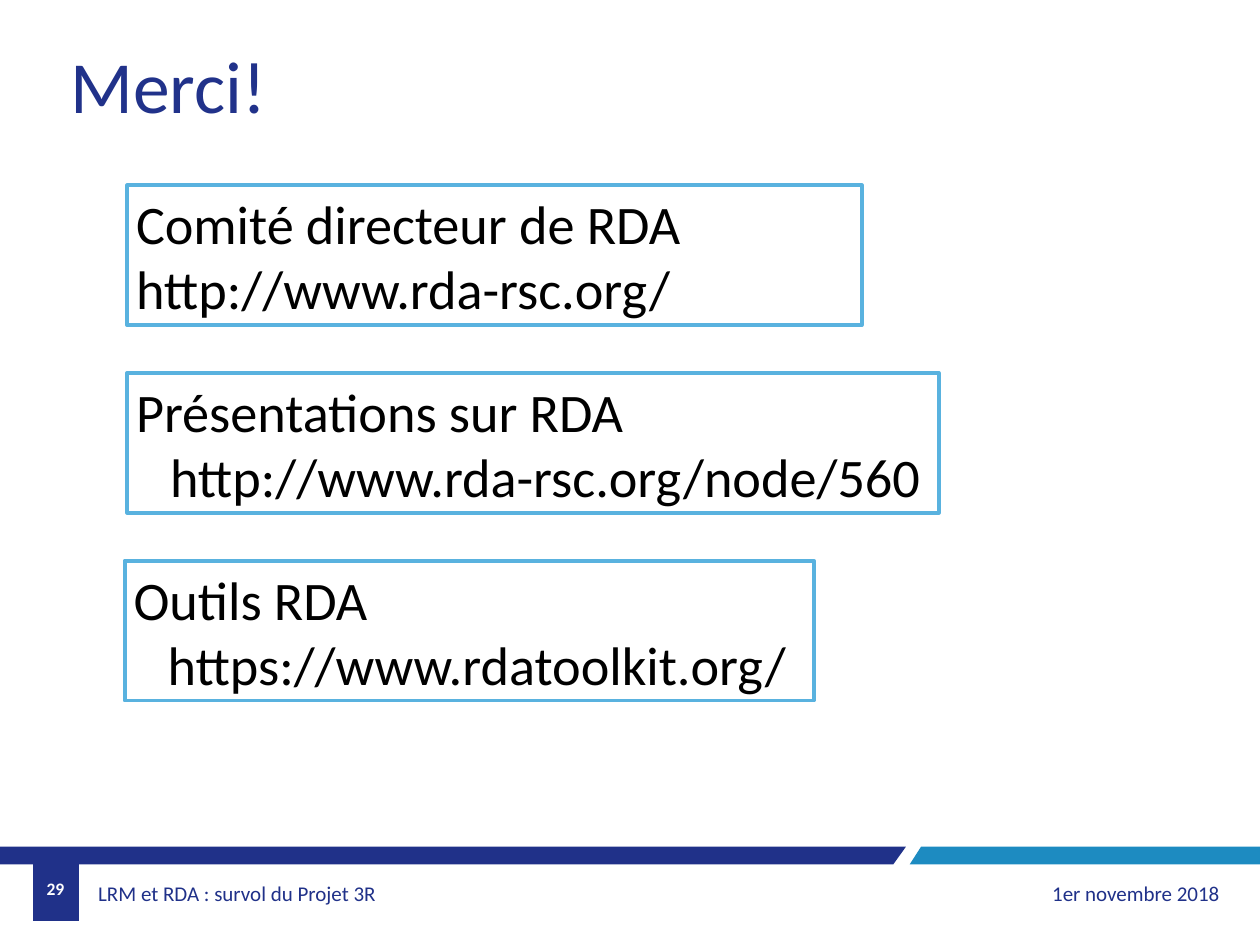
from pptx import Presentation
from pptx.dml.color import RGBColor
from pptx.enum.shapes import MSO_SHAPE as Shape
from pptx.enum.text import MSO_ANCHOR as Anchor, PP_ALIGN as Align
from pptx.util import Inches, Pt

COLORS = {
    "navy": "203189",
    "title": "21328A",
    "blue": "1D8BC1",
    "border": "59B2DF",
    "black": "000000",
    "white": "FFFFFF",
}


def rgb(name):
    return RGBColor.from_string(COLORS[name])


def write_text(shape, lines, size, color, bold=False, align=Align.LEFT,
               anchor=Anchor.TOP, wrap=True, insets=(0.07, 0.04), indent=0):
    frame = shape.text_frame
    frame.word_wrap = wrap
    frame.vertical_anchor = anchor
    frame.margin_left = frame.margin_right = Inches(insets[0])
    frame.margin_top = frame.margin_bottom = Inches(insets[1])
    for index, line in enumerate(lines):
        paragraph = frame.paragraphs[0] if index == 0 else frame.add_paragraph()
        paragraph.alignment = align
        if index and indent:
            properties = paragraph._p.get_or_add_pPr()
            properties.set("marL", str(Inches(indent)))
            properties.set("indent", "0")
        run = paragraph.add_run()
        run.text = line
        run.font.name = "Calibri"
        run.font.size = Pt(size)
        run.font.bold = bold
        run.font.color.rgb = rgb(color)


def add_text(slide, box, lines, **style):
    shape = slide.shapes.add_textbox(*map(Inches, box))
    write_text(shape, lines, **style)


def add_band(slide, points, color):
    corners = [(Inches(x), Inches(y)) for x, y in points]
    builder = slide.shapes.build_freeform(*corners[0])
    builder.add_line_segments(corners[1:], close=True)
    band = builder.convert_to_shape()
    band.shadow.inherit = False
    band.fill.solid()
    band.fill.fore_color.rgb = rgb(color)
    band.line.fill.background()


def add_footer(slide, left, top, width, height):
    right, bar_bottom = left + width, top + 0.14
    tab_left, tab_right = left + 0.26, left + 0.63
    text_top, text_height = top + 0.18, 0.38
    add_band(slide, [(left, top), (left + 7.19, top),
                     (left + 7.09, bar_bottom), (left, bar_bottom)], "navy")
    add_band(slide, [(left + 7.31, top), (right, top),
                     (right, bar_bottom), (left + 7.22, bar_bottom)], "blue")
    add_band(slide, [(tab_left, top), (tab_right, top),
                     (tab_right, top + height), (tab_left, top + height)], "navy")
    add_text(slide, (left + 0.73, text_top, 3.86, text_height),
             ["LRM et RDA : survol du Projet 3R"], size=12, color="navy",
             anchor=Anchor.MIDDLE, insets=(0.05, 0.03))
    add_text(slide, (left + 7.19, text_top, 2.56, text_height),
             ["1er novembre 2018"], size=12, color="navy",
             align=Align.RIGHT, anchor=Anchor.MIDDLE)
    add_text(slide, (tab_left, bar_bottom, 0.36, text_height), ["29"], size=10,
             color="white", bold=True, align=Align.CENTER, anchor=Anchor.MIDDLE)


def add_resource(slide, box, lines):
    shape = slide.shapes.add_shape(Shape.RECTANGLE, *map(Inches, box))
    shape.shadow.inherit = False
    shape.fill.background()
    shape.line.color.rgb = rgb("border")
    shape.line.width = Pt(2.25)
    write_text(shape, lines, size=31, color="black", indent=0.27)


def add_resources(slide, top, height, pitch):
    resources = [
        (1.01, 5.83, ["Comité directeur de RDA http://www.rda-rsc.org/"]),
        (1.01, 6.44, ["Présentations sur RDA", "http://www.rda-rsc.org/node/560"]),
        (0.99, 5.47, ["Outils RDA", "https://www.rdatoolkit.org/"]),
    ]
    for row, (left, width, lines) in enumerate(resources):
        add_resource(slide, (left, top + row * pitch, width, height), lines)


def main():
    presentation = Presentation()
    presentation.slide_width = Inches(10)
    presentation.slide_height = Inches(7.5)
    slide = presentation.slides.add_slide(presentation.slide_layouts[6])
    add_footer(slide, 0, 6.72, 10, 0.59)
    add_text(slide, (0.49, 0.28, 1.71, 0.78), ["Merci!"], size=42,
             color="title", wrap=False)
    add_resources(slide, 1.47, 1.11, 1.49)
    presentation.save("out.pptx")


if __name__ == "__main__":
    main()
